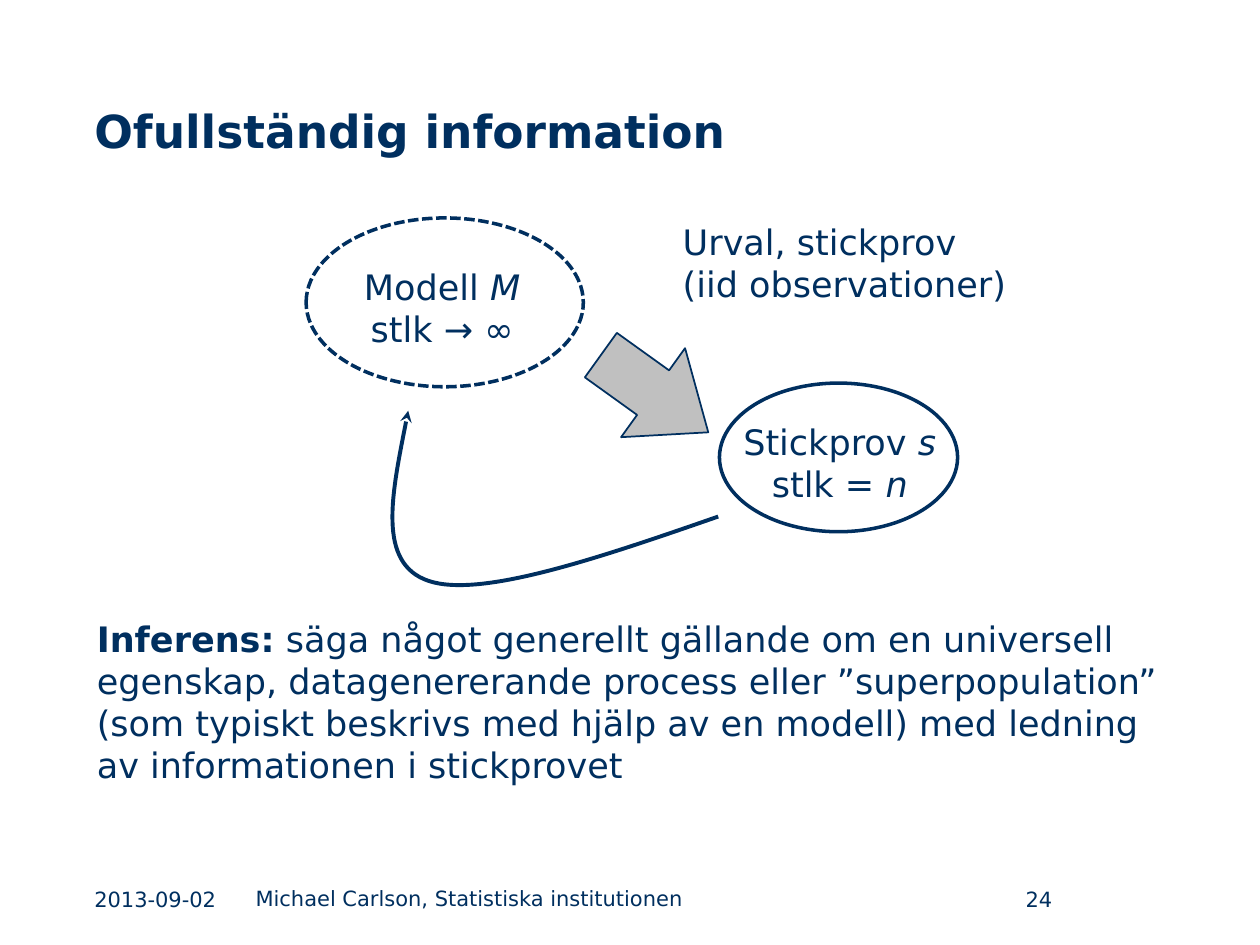
from lxml import etree
from pptx import Presentation
from pptx.dml.color import RGBColor
from pptx.enum.dml import MSO_LINE
from pptx.enum.shapes import MSO_SHAPE
from pptx.enum.text import MSO_ANCHOR, PP_ALIGN
from pptx.oxml.ns import qn
from pptx.util import Inches, Pt

OVAL, ARROW = MSO_SHAPE.OVAL, MSO_SHAPE.RIGHT_ARROW
DASH = MSO_LINE.SQUARE_DOT
TOP, MIDDLE, BOTTOM = MSO_ANCHOR.TOP, MSO_ANCHOR.MIDDLE, MSO_ANCHOR.BOTTOM
LEFT, CENTER, RIGHT = PP_ALIGN.LEFT, PP_ALIGN.CENTER, PP_ALIGN.RIGHT
FONT, NAVY, GRAY = "DejaVu Sans", "002F5F", "C0C0C0"
COLS, ROWS = 100, 75
UNIT = Inches(10) // COLS


def color(code):
    return RGBColor.from_string(code)


def grid(*vals):
    return [round(v * UNIT) for v in vals]


def inner(box, x, y, w, h):
    return box[0] + x, box[1] + y, w, h


def text(slide, box, lines, size=20, align=LEFT, anchor=TOP, wrap=True):
    frame = slide.shapes.add_textbox(*grid(*box)).text_frame
    frame.word_wrap = wrap
    frame.vertical_anchor = anchor
    for i, line in enumerate(lines):
        para = frame.add_paragraph() if i else frame.paragraphs[0]
        para.alignment = align
        para.font.name, para.font.size = FONT, Pt(size)
        para.font.color.rgb = color(NAVY)
        for words, style in line:
            run = para.add_run()
            run.text = words
            if style == "b":
                run.font.bold = True
            elif style == "i":
                run.font.italic = True


def paint(shape, width, fill=None):
    shape.shadow.inherit = False
    if fill:
        shape.fill.solid()
        shape.fill.fore_color.rgb = color(fill)
    else:
        shape.fill.background()
    shape.line.color.rgb = color(NAVY)
    shape.line.width = Pt(width)


def oval(slide, box, dash=None):
    shape = slide.shapes.add_shape(OVAL, *grid(*box))
    paint(shape, 2)
    if dash:
        shape.line.dash_style = dash


def arrow(slide, box):
    shape = slide.shapes.add_shape(ARROW, *grid(*box))
    shape.rotation = 35.7
    shape.adjustments[0], shape.adjustments[1] = 0.5, 0.62
    paint(shape, 1, GRAY)


def curve(slide, box, points):
    spots = [grid(box[0] + x, box[1] + y) for x, y in points]
    maker = slide.shapes.build_freeform(*spots[0])
    maker.add_line_segments(spots[1:], close=False)
    shape = maker.convert_to_shape()
    paint(shape, 2.25)
    trace = shape.element.find(".//" + qn("a:path"))
    legs = trace.findall(qn("a:lnTo"))
    for i in range(0, len(legs), 3):
        bend = etree.SubElement(trace, qn("a:cubicBezTo"))
        for leg in legs[i:i + 3]:
            bend.append(leg[0])
            trace.remove(leg)
    line = shape.element.spPr.find(qn("a:ln"))
    etree.SubElement(line, qn("a:headEnd"), type="stealth")


def title(slide, box):
    text(slide, box, [[("Ofullständig information", "b")]], 26, anchor=BOTTOM)


def model(slide, box):
    text(slide, inner(box, 3.5, 3.3, 14.6, 7.7),
         [[("Modell ", ""), ("M", "i")], [("stlk → ∞", "")]],
         align=CENTER, wrap=False)
    oval(slide, box, DASH)


def sample(slide, box):
    text(slide, inner(box, 0.7, 2.5, 17.7, 7.7),
         [[("Stickprov ", ""), ("s", "i")], [("stlk = ", ""), ("n", "i")]],
         align=CENTER, wrap=False)
    oval(slide, box)


def diagram(slide, box):
    model(slide, inner(box, 0, 0.3, 22, 13.4))
    sample(slide, inner(box, 32.8, 13.4, 18.9, 11.8))
    arrow(slide, inner(box, 22.4, 9.9, 10.5, 8.7))
    text(slide, inner(box, 28.9, 0, 28.1, 7.7),
         [[("Urval, stickprov", "")], [("(iid observationer)", "")]],
         wrap=False)
    curve(slide, box, [(8.1, 15.6), (6.9, 21.7), (5.6, 27.7), (9.7, 29.1),
                       (13.8, 30.5), (23.2, 27.3), (32.7, 24)])


def claim(slide, box):
    text(slide, box, [[
        ("Inferens:", "b"),
        (" säga något generellt gällande om en universell egenskap, "
         "datagenererande process eller ”superpopulation” (som typiskt "
         "beskrivs med hjälp av en modell) med ledning av informationen "
         "i stickprovet", "")]])


def footer(slide, box):
    parts = [
        (0, 12.3, "2013-09-02", LEFT, MIDDLE),
        (12.8, 49.1, "Michael Carlson, Statistiska institutionen", LEFT, TOP),
        (62.4, 15.6, "24", RIGHT, MIDDLE),
    ]
    for x, w, words, align, anchor in parts:
        text(slide, inner(box, x, 0, w, box[3]), [[(words, "")]], 12,
             align, anchor)


def main():
    deck = Presentation()
    deck.slide_width, deck.slide_height = grid(COLS, ROWS)
    slide = deck.slides.add_slide(deck.slide_layouts[6])
    title(slide, (6.5, 4.3, 86.9, 8.7))
    diagram(slide, (24.3, 17, 57, 30.5))
    claim(slide, (6.7, 48.5, 86.6, 14.5))
    footer(slide, (6.5, 69.8, 78, 3.1))
    deck.save("out.pptx")


if __name__ == "__main__":
    main()
